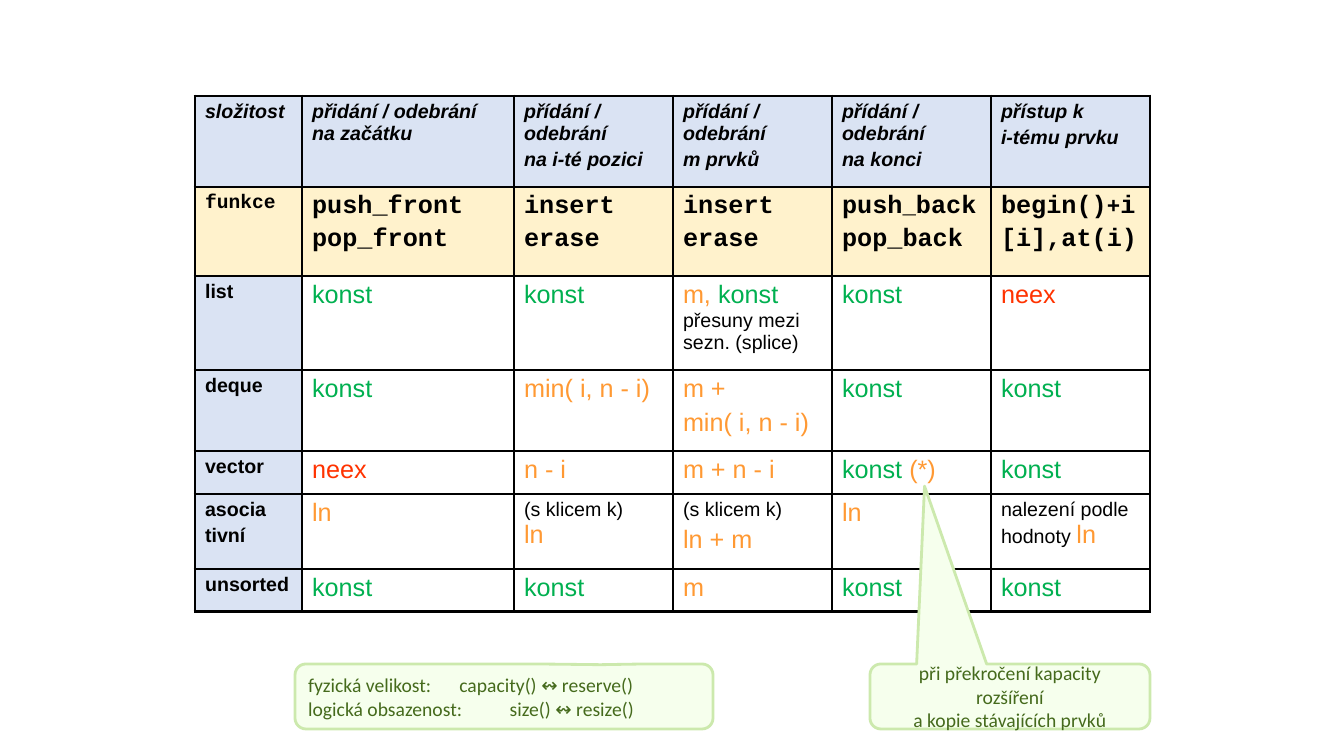
from lxml.etree import SubElement
from pptx import Presentation
from pptx.dml.color import RGBColor
from pptx.enum.shapes import MSO_SHAPE
from pptx.enum.text import MSO_ANCHOR, PP_ALIGN
from pptx.oxml.ns import qn
from pptx.util import Emu, Pt

PX = 914400 / 100.8
COLORS = {
    "black": "000000", "green": "00B050", "orange": "FF9933", "red": "FF3300",
    "blue": "DAE3F3", "cream": "FFF2CC",
    "mint": "F6FFED", "leaf": "CCE9AD", "moss": "456A1C",
}
# font, size, bold, italic, colour
STYLES = {
    "head": ("Arial", 14, True, True, "black"),
    "side": ("Arial", 14, True, False, "black"),
    "label": ("Courier New", 14, True, False, "black"),
    "code": ("Courier New", 18, True, False, "black"),
    "sign": ("Courier New", 16, True, False, "black"),
    "fast": ("Arial", 18, False, False, "green"),
    "slow": ("Arial", 18, False, False, "orange"),
    "none": ("Arial", 18, False, False, "red"),
    "note": ("Arial", 14, False, False, "black"),
    "call": ("Calibri", 14, False, False, "moss"),
}
WIDTHS = [107, 212, 159, 159, 159, 159]
HEIGHTS = [91, 89, 94, 81, 43, 75, 43]
THICK_FROM = 4  # rows from here on have a thick line below

# A cell is a list of paragraphs, a paragraph a list of (text, style) runs.
KONST = [[("konst", "fast")]]
NEEX = [[("neex", "none")]]
LN = [[("ln", "slow")]]
INSERT = [[("insert", "code")], [("erase", "code")]]
ADD = [("přídání / odebrání", "head")]
KEY = ("(s klicem k)", "note")
ROWS = [
    [[[("složitost", "head")]],
     [[("přidání / odebrání na začátku", "head")]],
     [ADD, [("na i-té pozici", "head")]],
     [ADD, [("m prvků", "head")]],
     [ADD, [("na konci", "head")]],
     [[("přístup k", "head")], [("i-tému prvku", "head")]]],
    [[[("funkce", "label")]],
     [[("push_front", "code")], [("pop_front", "code")]],
     INSERT,
     INSERT,
     [[("push", "code"), ("_", "sign"), ("back", "code")], [("pop_back", "code")]],
     [[("begin()", "code"), ("+", "sign"), ("i", "code")], [("[i],at(i)", "code")]]],
    [[[("list", "side")]],
     KONST,
     KONST,
     [[("m, ", "slow"), ("konst", "fast"), ("\n", ""),
       ("přesuny mezi sezn. (splice)", "note")]],
     KONST,
     NEEX],
    [[[("deque", "side")]],
     KONST,
     [[("min( i, n - i)", "slow")]],
     [[("m +", "slow")], [("min( i, n - i)", "slow")]],
     KONST,
     KONST],
    [[[("vector", "side")]],
     NEEX,
     [[("n - i", "slow")]],
     [[("m + n - i", "slow")]],
     [[("konst ", "fast"), ("(*)", "slow")]],
     KONST],
    [[[("asocia", "side")], [("tivní", "side")]],
     LN,
     [[KEY, ("\n", ""), ("ln", "slow")]],
     [[KEY], [("ln + m", "slow")]],
     LN,
     [[("nalezení podle hodnoty ", "note"), ("ln", "slow")]]],
    [[[("unsorted", "side")]],
     KONST,
     KONST,
     [[("m", "slow")]],
     KONST,
     KONST],
]
CALLOUTS = [
    ((870, 664, 280, 65), (-0.305, -3.236, 0.167), PP_ALIGN.CENTER,
     [[("při překročení kapacity rozšíření", "call"), ("\n", ""),
       ("a kopie stávajících prvků", "call")]]),
    ((295, 664, 418, 65), (0.231, -0.489, 0.167), PP_ALIGN.LEFT,
     [[("fyzická velikost:\tcapacity() ↭ reserve()", "call")],
      [("logická obsazenost:\tsize() ↭ resize()", "call")]]),
]


def px(n):
    return Emu(round(n * PX))


def write(frame, paras, align=PP_ALIGN.LEFT, gap=0.0):
    """Fill a text frame; gap is the space before, as a share of the text size."""
    frame.word_wrap = True
    for i, runs in enumerate(paras):
        para = frame.add_paragraph() if i else frame.paragraphs[0]
        para.alignment = align
        para.space_before = Pt(STYLES[runs[0][1]][1] * gap)
        for text, style in runs:
            if text == "\n":
                para.add_line_break()
                continue
            run = para.add_run()
            run.text = text
            font = run.font
            font.name, size, font.bold, font.italic, color = STYLES[style]
            font.size = Pt(size)
            font.color.rgb = RGBColor.from_string(COLORS[color])


prs = Presentation()
prs.slide_width, prs.slide_height = px(1344), px(756)
slide = prs.slides.add_slide(prs.slide_layouts[6])

frame = slide.shapes.add_table(len(ROWS), len(WIDTHS), px(195), px(96),
                               px(sum(WIDTHS)), px(sum(HEIGHTS)))
table = frame.table
table.first_row = table.horz_banding = False
for col, width in zip(table.columns, WIDTHS):
    col.width = px(width)
for row, height in zip(table.rows, HEIGHTS):
    row.height = px(height)

for r, row in enumerate(ROWS):
    for c, paras in enumerate(row):
        cell = table.cell(r, c)
        write(cell.text_frame, paras, gap=0.2)
        if r < 2 or c == 0:
            cell.fill.solid()
            tint = COLORS["cream" if r == 1 else "blue"]
            cell.fill.fore_color.rgb = RGBColor.from_string(tint)
        else:
            cell.fill.background()
        thick = {
            "lnL": c == 0,
            "lnR": c == len(WIDTHS) - 1,
            "lnT": r == 0 or r > THICK_FROM,
            "lnB": r >= THICK_FROM,
        }
        props = cell._tc.get_or_add_tcPr()
        for i, (side, bold) in enumerate(thick.items()):
            line = SubElement(props, qn(f"a:{side}"), w=str(Pt(2.25 if bold else 1)))
            fill = SubElement(line, qn("a:solidFill"))
            SubElement(fill, qn("a:srgbClr"), val=COLORS["black"])
            props.insert(i, line)

for box, adjust, align, paras in CALLOUTS:
    shape = slide.shapes.add_shape(MSO_SHAPE.ROUNDED_RECTANGULAR_CALLOUT, *map(px, box))
    for i, value in enumerate(adjust):
        shape.adjustments[i] = value
    shape.shadow.inherit = False
    shape.fill.solid()
    shape.fill.fore_color.rgb = RGBColor.from_string(COLORS["mint"])
    shape.line.color.rgb = RGBColor.from_string(COLORS["leaf"])
    shape.line.width = Pt(2)
    shape.text_frame.vertical_anchor = MSO_ANCHOR.MIDDLE
    write(shape.text_frame, paras, align)

prs.save("out.pptx")
